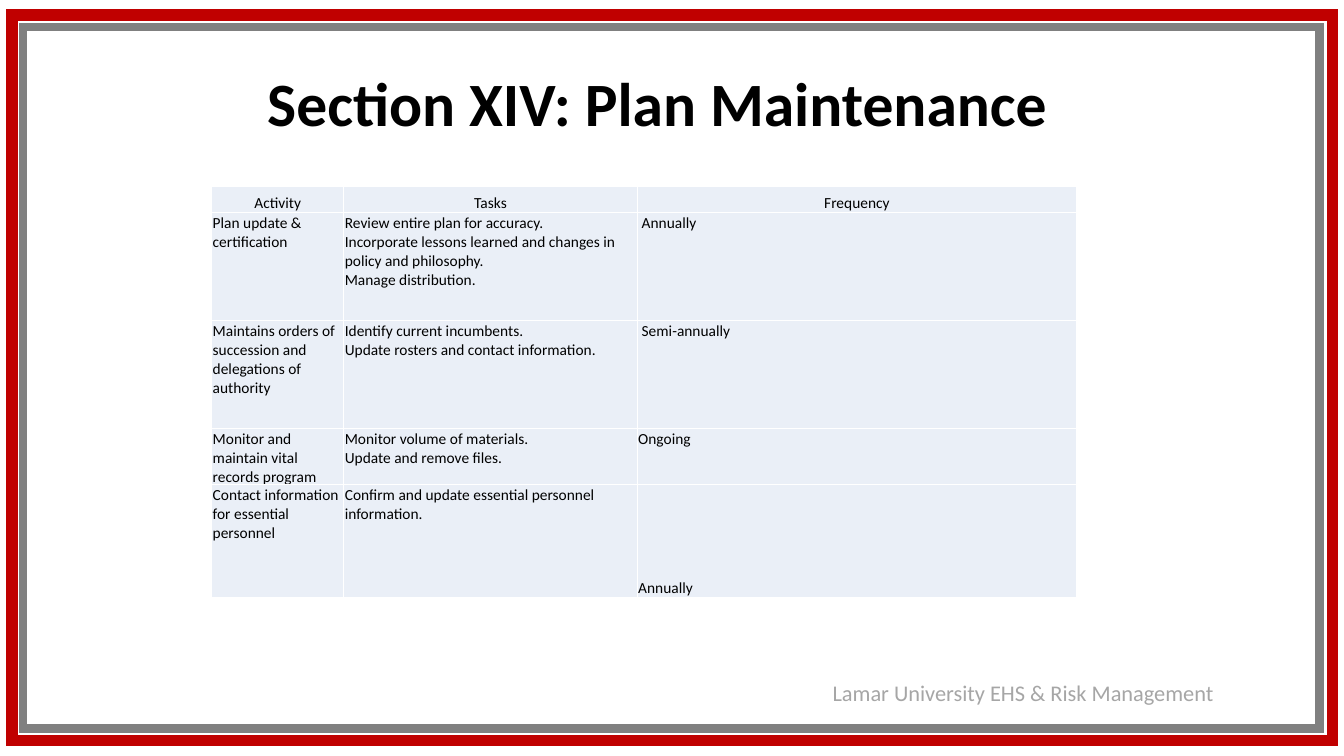
"""Build the plan maintenance slide with its framed border and schedule table."""
from lxml import etree
from pptx import Presentation
from pptx.dml.color import RGBColor
from pptx.enum.shapes import MSO_SHAPE
from pptx.enum.text import MSO_ANCHOR, MSO_AUTO_SIZE, PP_ALIGN
from pptx.oxml.ns import qn
from pptx.util import Inches, Pt

RECTANGLE = MSO_SHAPE.RECTANGLE
TOP, MIDDLE, BOTTOM = MSO_ANCHOR.TOP, MSO_ANCHOR.MIDDLE, MSO_ANCHOR.BOTTOM
LEFT, CENTER = PP_ALIGN.LEFT, PP_ALIGN.CENTER
NO_AUTOFIT = MSO_AUTO_SIZE.NONE
TITLE_ONLY = 5

COLUMN_WIDTHS = [1.31, 2.91, 4.36]
ROW_HEIGHTS = [0.26, 1.07, 1.07, 0.54, 1.12]
SCHEDULE = [
    ("Activity", "Tasks", "Frequency"),
    ("Plan update & certification",
     "Review entire plan for accuracy.\n"
     "Incorporate lessons learned and changes in policy and philosophy.\n"
     "Manage distribution.",
     " Annually"),
    ("Maintains orders of succession and delegations of authority",
     "Identify current incumbents.\nUpdate rosters and contact information.",
     " Semi-annually"),
    ("Monitor and maintain vital records program",
     "Monitor volume of materials.\nUpdate and remove files.",
     "Ongoing"),
    ("Contact information for essential personnel",
     "Confirm and update essential personnel information.",
     "Annually"),
]


def rgb(hex_color):
    return RGBColor.from_string(hex_color)


class SlideBuilder:
    font_name = "Calibri"
    text_color = "000000"
    cell_fill = "EAEFF7"
    cell_border = "FFFFFF"

    def __init__(self, slide):
        self.slide = slide

    def set_text(self, frame, text, size, color=text_color, bold=False, align=LEFT):
        frame.word_wrap = True
        paragraph = frame.paragraphs[0]
        paragraph.text = text
        paragraph.alignment = align
        font = paragraph.font
        font.name, font.size, font.bold = self.font_name, Pt(size), bold
        font.color.rgb = rgb(color)
        return paragraph

    def title(self, text, left, top, width, height):
        title = self.slide.shapes.title
        title.left, title.top = Inches(left), Inches(top)
        title.width, title.height = Inches(width), Inches(height)
        title.text_frame.auto_size = NO_AUTOFIT
        title.text_frame.vertical_anchor = MIDDLE
        self.set_text(title.text_frame, text, 44, bold=True).line_spacing = 0.9

    def frame(self, left, top, width, height, color, weight):
        border = self.slide.shapes.add_shape(
            RECTANGLE, Inches(left), Inches(top), Inches(width), Inches(height))
        border.shadow.inherit = False
        border.fill.background()
        border.line.color.rgb = rgb(color)
        border.line.width = Pt(weight)
        outline = border.element.spPr.find(qn("a:ln"))
        etree.SubElement(outline, qn("a:miter"), lim="800000")

    def label(self, text, left, top, width, height, size, color):
        box = self.slide.shapes.add_textbox(
            Inches(left), Inches(top), Inches(width), Inches(height))
        self.set_text(box.text_frame, text, size, color)

    def cell(self, cell, text, align, anchor):
        cell.margin_left = cell.margin_right = cell.margin_top = Inches(0.01)
        cell.margin_bottom = 0
        cell.vertical_anchor = anchor
        self.set_text(cell.text_frame, text, 11, align=align)
        properties = cell._tc.get_or_add_tcPr()
        for side in ("lnL", "lnR", "lnT", "lnB"):
            edge = etree.SubElement(properties, qn(f"a:{side}"), w=str(Pt(1)))
            fill = etree.SubElement(edge, qn("a:solidFill"))
            etree.SubElement(fill, qn("a:srgbClr"), val=self.cell_border)
        cell.fill.solid()
        cell.fill.fore_color.rgb = rgb(self.cell_fill)

    def table(self, rows, left, top, widths, heights):
        table = self.slide.shapes.add_table(
            len(rows), len(widths), Inches(left), Inches(top),
            Inches(sum(widths)), Inches(sum(heights))).table
        table.first_row = table.horz_banding = False
        for column, width in zip(table.columns, widths):
            column.width = Inches(width)
        for row, height in zip(table.rows, heights):
            row.height = Inches(height)
        last_cell = (len(rows) - 1, len(widths) - 1)
        for r, row in enumerate(rows):
            for c, text in enumerate(row):
                align = CENTER if r == 0 else LEFT
                anchor = BOTTOM if r == 0 or (r, c) == last_cell else TOP
                self.cell(table.cell(r, c), text, align, anchor)


def main():
    presentation = Presentation()
    presentation.slide_width = Inches(13.33)
    presentation.slide_height = Inches(7.5)
    layout = presentation.slide_layouts[TITLE_ONLY]
    builder = SlideBuilder(presentation.slides.add_slide(layout))
    builder.frame(0.12, 0.15, 13.1, 7.2, "C00000", 8)
    builder.frame(0.23, 0.27, 12.86, 6.96, "808080", 6)
    builder.label("Lamar University EHS & Risk Management",
                  8.16, 6.69, 4.1, 0.38, 16, "A6A6A6")
    builder.title("\tSection XIV: Plan Maintenance", 2.05, 0.47, 8.68, 1.18)
    builder.table(SCHEDULE, 2.1, 1.85, COLUMN_WIDTHS, ROW_HEIGHTS)
    presentation.save("out.pptx")


if __name__ == "__main__":
    main()
